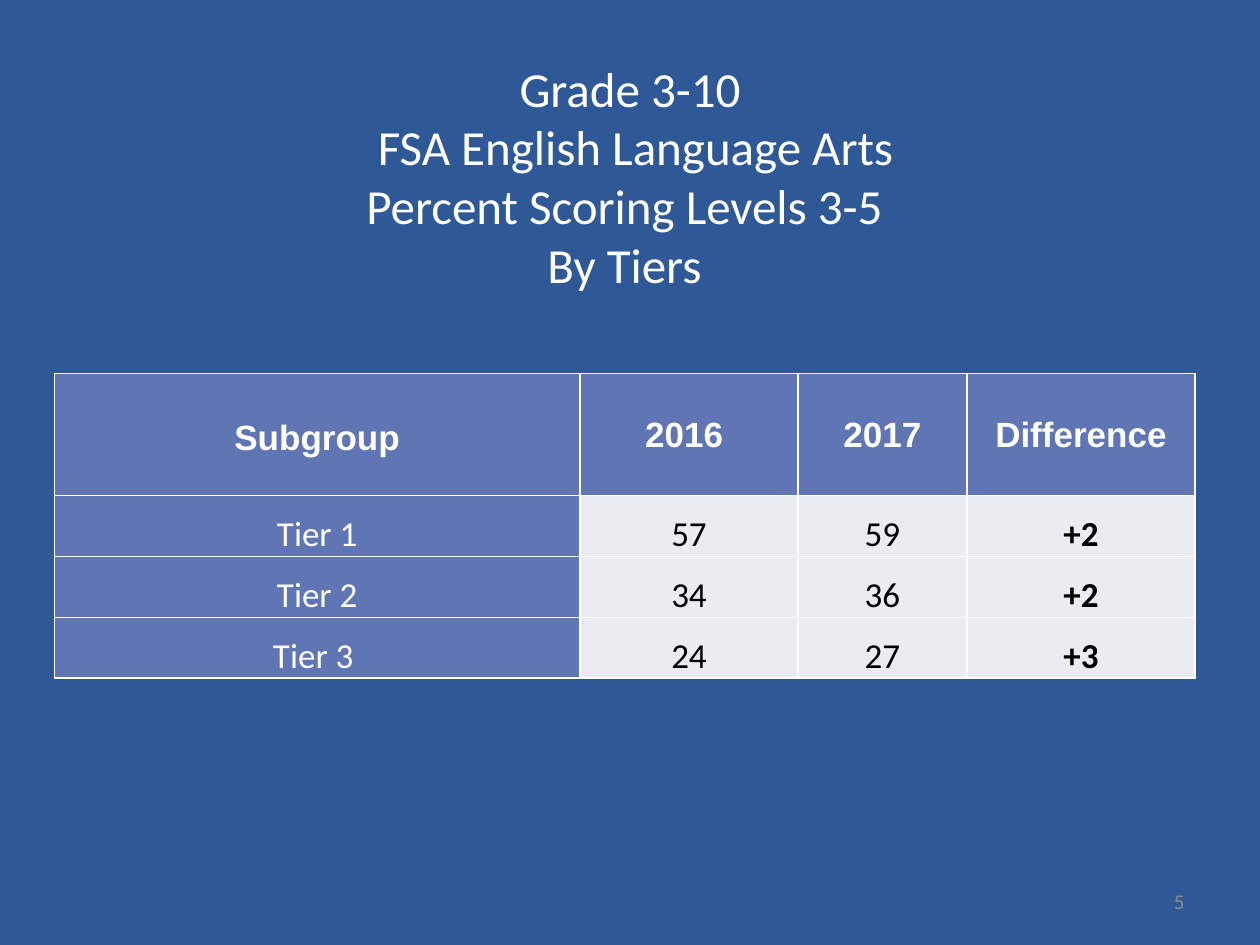
from lxml.etree import SubElement
from pptx import Presentation
from pptx.dml.color import RGBColor
from pptx.enum.text import MSO_ANCHOR, MSO_AUTO_SIZE, PP_ALIGN
from pptx.oxml.ns import qn
from pptx.util import Pt

COLORS = {
    "back": "2F5897",
    "head": "6076B4",
    "body": "EAECF2",
    "white": "FFFFFF",
    "black": "000000",
    "gray": "8C8C8C",
}
TITLE = "Grade 3-10\v FSA English Language Arts\vPercent Scoring Levels 3-5 \vBy Tiers "
ROWS = [
    ["Subgroup", "2016 ", "2017", "Difference"],
    ["Tier 1", "57", "59", "+2"],
    ["Tier 2", "34", "36", "+2"],
    ["Tier 3 ", "24", "27", "+3"],
]
WIDTHS = [300.5, 124.5, 96.5, 130.5]
HEIGHTS = [69.9, 34.8, 34.8, 34.8]


def rgb(name):
    return RGBColor.from_string(COLORS[name])


def write(frame, text, size=20, font="Calibri", color="white", bold=False,
          align=PP_ALIGN.CENTER):
    para = frame.paragraphs[0]
    para.text = text
    para.alignment = align
    for run in para.runs:
        run.font.size = Pt(size)
        run.font.name = font
        run.font.bold = bold
        run.font.color.rgb = rgb(color)


def place(shape, box):
    shape.left, shape.top, shape.width, shape.height = map(Pt, box)


def add_title(slide, box):
    title = slide.shapes.title
    place(title, box)
    frame = title.text_frame
    frame.word_wrap = True
    frame.auto_size = MSO_AUTO_SIZE.NONE
    frame.vertical_anchor = MSO_ANCHOR.MIDDLE
    write(frame, TITLE, size=28)


def add_edges(cell):
    props = cell._tc.get_or_add_tcPr()
    for side in ("lnL", "lnR", "lnT", "lnB"):
        line = SubElement(props, qn(f"a:{side}"), w=str(Pt(1)))
        fill = SubElement(line, qn("a:solidFill"))
        SubElement(fill, qn("a:srgbClr"), val=COLORS["white"])


def add_scores(slide, box):
    table = slide.shapes.add_table(len(ROWS), len(WIDTHS), *map(Pt, box)).table
    for column, width in zip(table.columns, WIDTHS):
        column.width = Pt(width)
    for row, height in zip(table.rows, HEIGHTS):
        row.height = Pt(height)
    for r, values in enumerate(ROWS):
        for c, value in enumerate(values):
            cell = table.cell(r, c)
            head = r == 0
            label = head or c == 0
            cell.margin_left = cell.margin_right = cell.margin_top = Pt(0.7)
            cell.margin_bottom = Pt(0)
            cell.vertical_anchor = MSO_ANCHOR.MIDDLE if head else MSO_ANCHOR.BOTTOM
            if head and c == 0:
                cell.margin_top = Pt(4)
            add_edges(cell)
            cell.fill.solid()
            cell.fill.fore_color.rgb = rgb("head" if label else "body")
            write(cell.text_frame, value,
                  font="Arial" if head else "Calibri",
                  color="white" if label else "black",
                  bold=head or c == len(WIDTHS) - 1)


def add_number(slide, box):
    frame = slide.shapes.add_textbox(*map(Pt, box)).text_frame
    frame.word_wrap = True
    frame.vertical_anchor = MSO_ANCHOR.MIDDLE
    write(frame, "5", size=12, color="gray", align=PP_ALIGN.RIGHT)


def main():
    deck = Presentation()
    deck.slide_width, deck.slide_height = Pt(720), Pt(540)
    slide = deck.slides.add_slide(deck.slide_layouts[5])
    slide.background.fill.solid()
    slide.background.fill.fore_color.rgb = rgb("back")
    add_title(slide, (36, 21.6, 648, 157.7))
    add_scores(slide, (31, 213.3, sum(WIDTHS), sum(HEIGHTS)))
    add_number(slide, (516, 500.5, 168, 28.8))
    deck.save("out.pptx")


if __name__ == "__main__":
    main()
